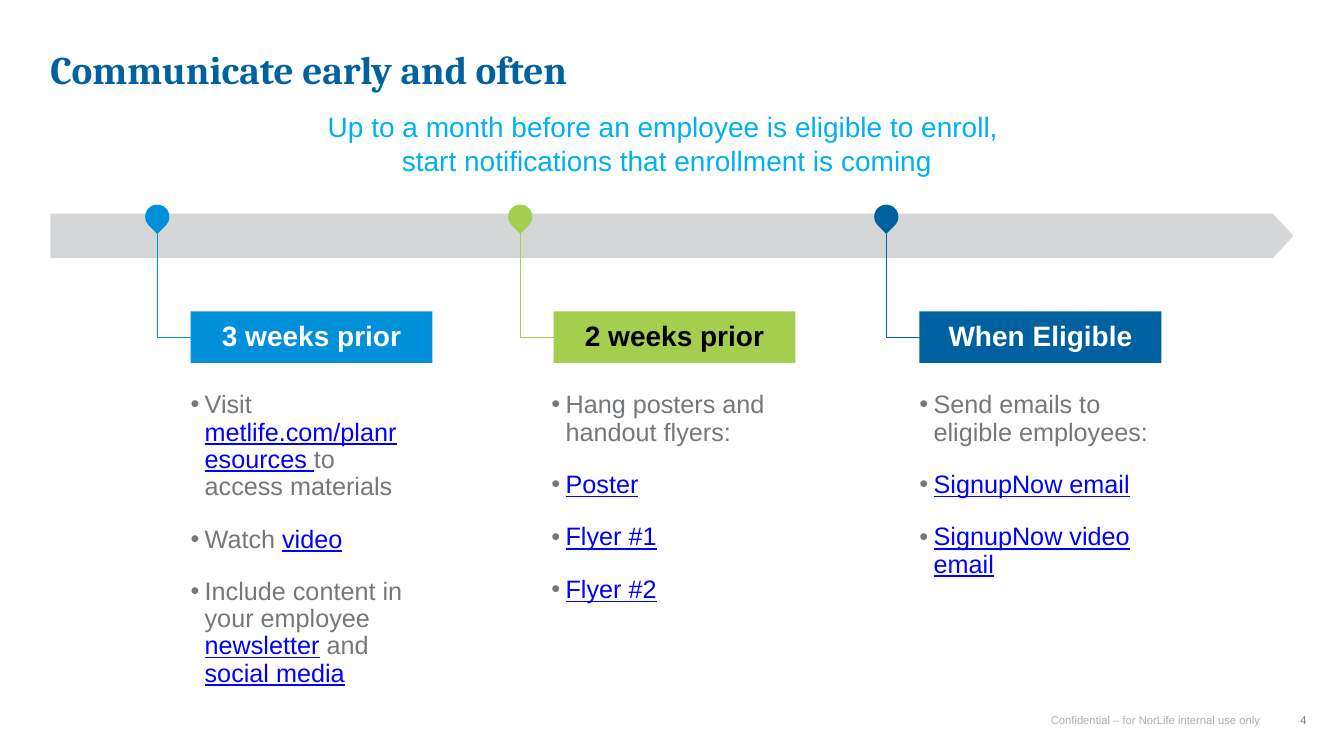
from dataclasses import dataclass

from lxml.etree import SubElement
from pptx import Presentation
from pptx.dml.color import RGBColor
from pptx.enum.shapes import MSO_SHAPE
from pptx.enum.text import MSO_ANCHOR, PP_ALIGN
from pptx.oxml.ns import qn
from pptx.util import Inches, Pt


@dataclass(frozen=True)
class Theme:
    """Colours, fonts and type sizes of the slide."""

    navy: str = "0061A0"
    blue: str = "0090DA"
    green: str = "A3CE4E"
    sky: str = "00B0F0"
    link: str = "0000FF"
    body: str = "75787B"
    silver: str = "ACAEB0"
    white: str = "FFFFFF"
    black: str = "000000"
    heading_font: str = "Cambria"
    body_font: str = "Arial"
    title_size: int = 28
    lead_size: int = 20
    body_size: int = 18
    small_size: int = 8


THEME = Theme()

MILESTONES = [
    {
        "label": "3 weeks prior", "left": 1.89, "fill": THEME.blue, "color": THEME.white,
        "list_left": 1.89, "list_width": 2.1,
        "steps": [
            "Visit |metlife.com/planresources |to access materials",
            "Watch |video|",
            "Include content in your employee |newsletter| and |social media|",
        ],
    },
    {
        "label": "2 weeks prior", "left": 5.49, "fill": THEME.green, "color": THEME.black,
        "list_left": 5.47, "list_width": 2.53,
        "steps": ["Hang posters and handout flyers:", "|Poster|", "|Flyer #1|", "|Flyer #2|"],
    },
    {
        "label": "When Eligible", "left": 9.12, "fill": THEME.navy, "color": THEME.white,
        "list_left": 9.12, "list_width": 2.4,
        "steps": ["Send emails to eligible employees:", "|SignupNow email|", "|SignupNow video email|"],
    },
]


def add_bullet(paragraph, color):
    """Give the paragraph a hanging round bullet."""
    properties = paragraph._p.get_or_add_pPr()
    properties.set("marL", str(Inches(0.14)))
    properties.set("indent", str(-Inches(0.14)))
    bullet_color = SubElement(properties, qn("a:buClr"))
    SubElement(bullet_color, qn("a:srgbClr"), val=color)
    SubElement(properties, qn("a:buFont"), typeface="Arial")
    SubElement(properties, qn("a:buChar"), char="•")


def write(shape, text, *, size, color, font=THEME.body_font, bold=False, align=PP_ALIGN.LEFT,
          anchor=MSO_ANCHOR.TOP, spacing=0.9, gap=0, bullets=False, insets=(0, 0)):
    """Write one paragraph per item, with link styling between bars."""
    frame = shape.text_frame
    frame.word_wrap = True
    frame.vertical_anchor = anchor
    frame.margin_left = frame.margin_right = Inches(insets[0])
    frame.margin_top = frame.margin_bottom = Inches(insets[1])
    for number, item in enumerate([text] if isinstance(text, str) else text):
        paragraph = frame.add_paragraph() if number else frame.paragraphs[0]
        paragraph.alignment = align
        paragraph.line_spacing = spacing
        if number and gap:
            paragraph.space_before = Pt(gap)
        if bullets:
            add_bullet(paragraph, color)
        for part, words in enumerate(item.split("|")):
            is_link = part % 2 == 1
            for row, line in enumerate(words.split("\n")):
                if row:
                    paragraph.add_line_break()
                if not line:
                    continue
                run = paragraph.add_run()
                run.text = line
                run.font.name = font
                run.font.size = Pt(size)
                run.font.bold = bold
                run.font.underline = is_link
                run.font.color.rgb = RGBColor.from_string(THEME.link if is_link else color)


def add_text(slide, box, text, **style):
    """Place a text box at left, top, width, height in inches."""
    write(slide.shapes.add_textbox(*map(Inches, box)), text, **style)


def add_block(slide, preset, box, color):
    """Place a flat preset shape without outline."""
    shape = slide.shapes.add_shape(preset, *map(Inches, box))
    shape.shadow.inherit = False
    shape.fill.solid()
    shape.fill.fore_color.rgb = RGBColor.from_string(color)
    shape.line.fill.background()
    return shape


def add_header(slide, box):
    """Place the title and the centred lead text below it."""
    left, top, width, height = box
    add_text(slide, (left, top, 10.34, 0.8), "Communicate early and often",
             size=THEME.title_size, color=THEME.navy, font=THEME.heading_font, bold=True)
    add_text(slide, (left - 0.58, top + 0.54, width + 1.06, height - 0.54),
             "Up to a month before an employee is eligible to enroll, \n"
             "start notifications that enrollment is coming",
             size=THEME.lead_size, color=THEME.sky, align=PP_ALIGN.CENTER, spacing=1.0,
             insets=(0.1, 0.05))


def add_timeline(slide, box):
    """Place the half-transparent timeline arrow."""
    arrow = add_block(slide, MSO_SHAPE.PENTAGON, box, THEME.silver)
    arrow.adjustments[0] = 0.469
    color = arrow.fill._xPr.find(qn("a:solidFill")).find(qn("a:srgbClr"))
    SubElement(color, qn("a:alpha"), val="50000")


def add_milestone(slide, box, milestone):
    """Place a pin on the timeline, its elbow line, label and list of steps."""
    left, top, width, height = box
    color = milestone["fill"]
    pin_center = left - 0.33
    pin_size = 0.24
    label_top = top + 1.06
    elbow_y = label_top + 0.26

    builder = slide.shapes.build_freeform(Inches(left + 0.15), Inches(elbow_y))
    builder.add_line_segments(
        [(Inches(pin_center), Inches(elbow_y)), (Inches(pin_center), Inches(top + 0.26))], close=False)
    elbow = builder.convert_to_shape()
    elbow.shadow.inherit = False
    elbow.fill.background()
    elbow.line.color.rgb = RGBColor.from_string(color)
    elbow.line.width = Pt(1)

    pin = add_block(slide, MSO_SHAPE.TEAR, (pin_center - pin_size / 2, top, pin_size, pin_size), color)
    pin.rotation = 135

    label = add_block(slide, MSO_SHAPE.RECTANGLE, (left, label_top, width, 0.51), color)
    write(label, milestone["label"], size=THEME.lead_size, color=milestone["color"], bold=True,
          align=PP_ALIGN.CENTER, anchor=MSO_ANCHOR.MIDDLE, insets=(0.1, 0.05))

    list_top = top + 1.86
    add_text(slide, (milestone["list_left"], list_top, milestone["list_width"], top + height - list_top),
             milestone["steps"], size=THEME.body_size, color=THEME.body, gap=18, bullets=True)


def add_footer(slide, box):
    """Place the confidentiality line and the page number."""
    left, top, width, height = box
    add_text(slide, (left, top + 0.07, 2.6, 0.23), "Confidential – for NorLife internal use only",
             size=THEME.small_size, color=THEME.silver, align=PP_ALIGN.RIGHT, insets=(0.1, 0))
    add_text(slide, (left + width - 0.8, top, 0.8, height), "4",
             size=THEME.small_size, color=THEME.body, align=PP_ALIGN.CENTER,
             anchor=MSO_ANCHOR.MIDDLE, spacing=1.0, insets=(0.1, 0.05))


def main():
    """Build the slide and save it."""
    presentation = Presentation()
    presentation.slide_width = Inches(13.33)
    presentation.slide_height = Inches(7.5)
    slide = presentation.slides.add_slide(presentation.slide_layouts[6])
    add_header(slide, (0.5, 0.5, 12.33, 1.31))
    add_timeline(slide, (0.5, 2.12, 12.33, 0.44))
    for milestone in MILESTONES:
        add_milestone(slide, (milestone["left"], 2.03, 2.4, 3.95), milestone)
    add_footer(slide, (10, 7.02, 3.33, 0.25))
    presentation.save("out.pptx")


if __name__ == "__main__":
    main()
